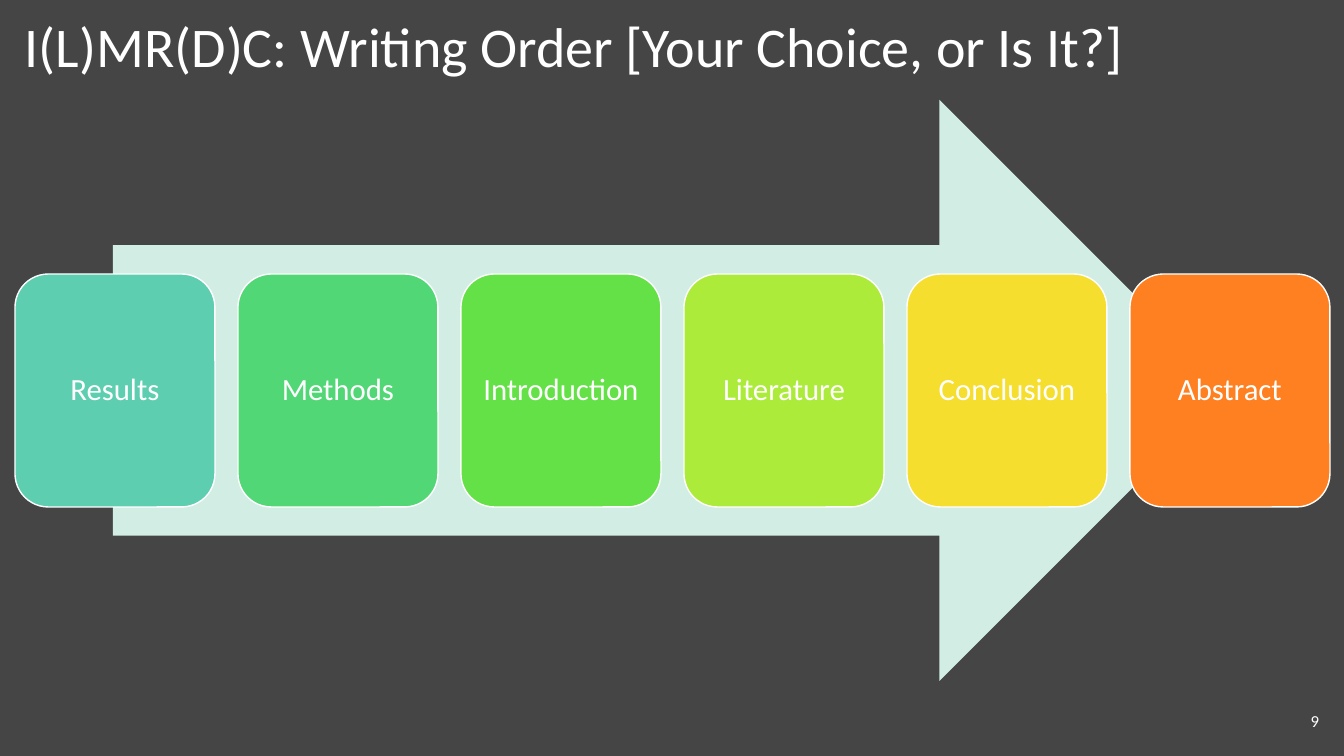
"""Build the slide on the order in which to write the sections of a paper."""
from pptx import Presentation
from pptx.dml.color import RGBColor
from pptx.enum.shapes import MSO_SHAPE as SHAPE
from pptx.enum.text import MSO_ANCHOR as ANCHOR, PP_ALIGN as ALIGN
from pptx.util import Pt

TITLE = "I(L)MR(D)C: Writing Order [Your Choice, or Is It?]"
PAGE = "9"
STEPS = [
    ("Results", "teal"),
    ("Methods", "green"),
    ("Introduction", "grass"),
    ("Literature", "lime"),
    ("Conclusion", "yellow"),
    ("Abstract", "orange"),
]
COLORS = {
    "background": "454545",
    "white": "FFFFFF",
    "arrow": "D2EDE3",
    "teal": "5DCEAF",
    "green": "51D775",
    "grass": "64E146",
    "lime": "ADEB3A",
    "yellow": "F5DE2D",
    "orange": "FF8021",
}
WIDTH, HEIGHT = 1344, 756
MARGIN = 15
BOX_TOP, BOX_W, BOX_H, BOX_GAP = 274, 200, 233, 23


def px(*lengths):
    return [round(n * 914400 / 100.8) for n in lengths]


def color(name):
    return RGBColor.from_string(COLORS[name])


def write(sp, text, size, align=ALIGN.LEFT, spacing=1.0):
    tf = sp.text_frame
    tf.word_wrap = True
    tf.vertical_anchor = ANCHOR.MIDDLE
    p = tf.paragraphs[0]
    p.alignment = align
    p.line_spacing = spacing
    r = p.add_run()
    r.text = text
    r.font.name = "Calibri"
    r.font.size = Pt(size)
    r.font.color.rgb = color("white")


def add_block(s, kind, box, fill):
    sp = s.shapes.add_shape(kind, *px(*box))
    sp.shadow.inherit = False
    sp.fill.solid()
    sp.fill.fore_color.rgb = color(fill)
    sp.line.fill.background()
    return sp


def main():
    prs = Presentation()
    prs.slide_width, prs.slide_height = px(WIDTH, HEIGHT)
    s = prs.slides.add_slide(prs.slide_layouts[6])
    s.background.fill.solid()
    s.background.fill.fore_color.rgb = color("background")

    title = s.shapes.add_textbox(*px(MARGIN, 12, WIDTH - 2 * MARGIN, 75))
    write(title, TITLE, 40, spacing=0.9)

    add_block(s, SHAPE.RIGHT_ARROW, (113, 100, 1117, 581), "arrow")
    for i, (name, fill) in enumerate(STEPS):
        left = MARGIN + i * (BOX_W + BOX_GAP)
        sp = add_block(s, SHAPE.ROUNDED_RECTANGLE, (left, BOX_TOP, BOX_W, BOX_H), fill)
        sp.line.color.rgb = color("white")
        sp.line.width = Pt(1)
        write(sp, name, 22, align=ALIGN.CENTER, spacing=0.9)

    page = s.shapes.add_textbox(*px(WIDTH - MARGIN - 302, 701, 302, 40))
    write(page, PAGE, 12, align=ALIGN.RIGHT)
    prs.save("out.pptx")


if __name__ == "__main__":
    main()
